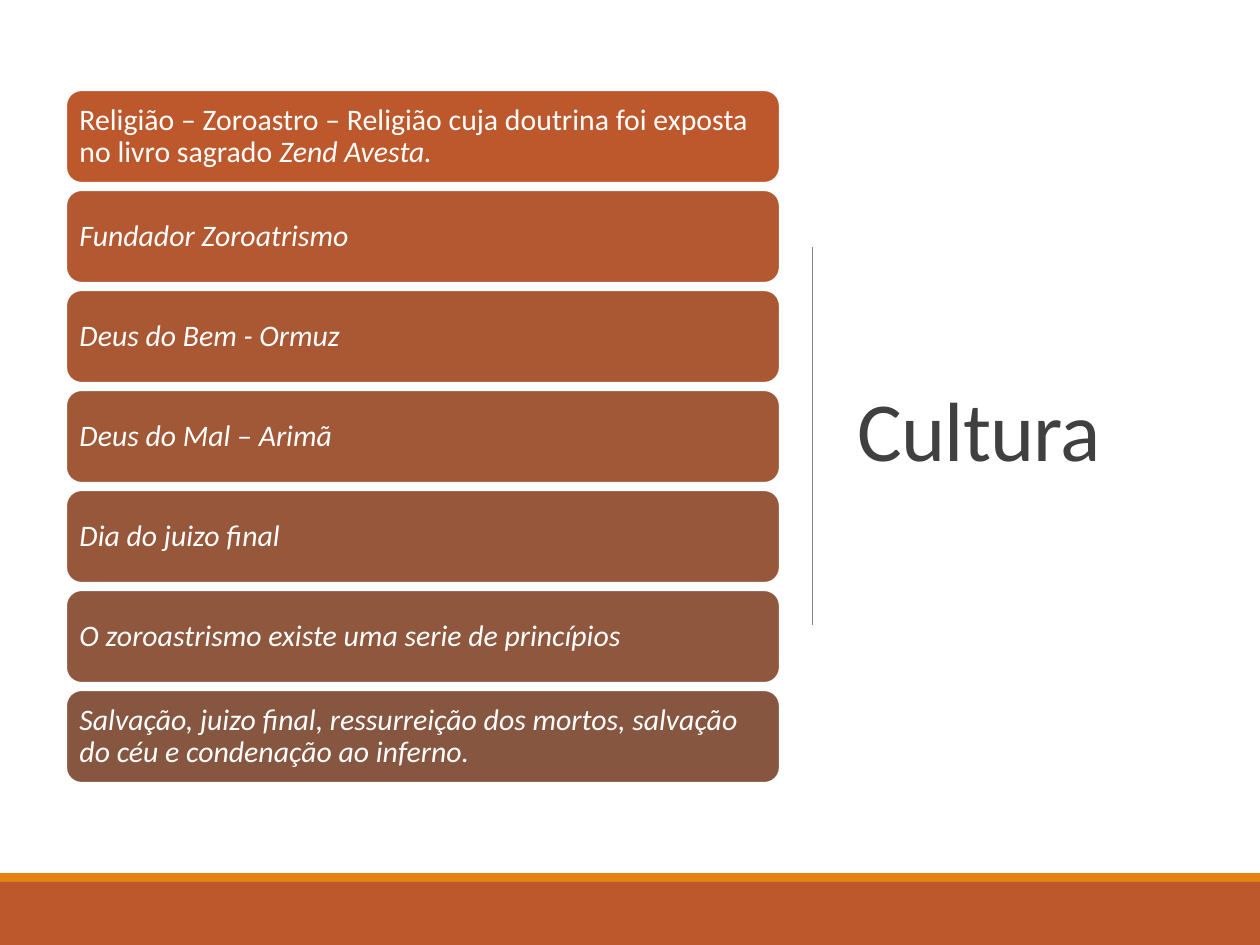
"""Build the Cultura slide: a stack of seven bars beside its title."""
import lxml.etree
import pptx
import pptx.dml.color
import pptx.enum.shapes
import pptx.enum.text
import pptx.oxml.ns
import pptx.util

HUES = {"white": "FFFFFF", "dark": "404040", "rule": "808080",
        "gold": "E48312", "rust": "BD582C"}
FADE = ["BD582C", "B35830", "AA5834", "A05837", "97573A", "8F573D", "865640"]
BARS = [
    [("Religião – Zoroastro – Religião cuja doutrina foi exposta "
      "no livro sagrado ", False), ("Zend Avesta.", True)],
    [("Fundador Zoroatrismo", True)],
    [("Deus do Bem - Ormuz", True)],
    [("Deus do Mal – Arimã", True)],
    [("Dia do juizo final", True)],
    [("O zoroastrismo existe uma serie de princípios", True)],
    [("Salvação, juizo final, ressurreição dos mortos, salvação "
      "do céu e condenação ao inferno.", True)],
]
TOP, STEP = 90, 100


def px(num):
    return pptx.util.Emu(round(num * 914400 / 126))


def tint(code):
    return pptx.dml.color.RGBColor.from_string(code)


class Deck:
    def __init__(self):
        self.font = "Calibri"
        self.file = pptx.Presentation()
        self.file.slide_width = px(1260)
        self.file.slide_height = px(945)
        self.slide = self.file.slides.add_slide(self.file.slide_layouts[5])

    def run(self, para, text, size, code, slant=False):
        run = para.add_run()
        run.text = text
        run.font.name = self.font
        run.font.size = pptx.util.Pt(size)
        run.font.italic = slant
        run.font.color.rgb = tint(code)
        return run

    def title(self, text, x, y, w, h):
        head = self.slide.shapes.title
        head.left, head.top, head.width, head.height = map(px, (x, y, w, h))
        frame = head.text_frame
        frame.word_wrap = True
        frame.vertical_anchor = pptx.enum.text.MSO_ANCHOR.MIDDLE
        para = frame.paragraphs[0]
        para.alignment = pptx.enum.text.PP_ALIGN.LEFT
        para.line_spacing = 0.85
        run = self.run(para, text, 48, HUES["dark"])
        run._r.get_or_add_rPr().set("spc", "-50")

    def shape(self, kind, x, y, w, h, code):
        shape = self.slide.shapes.add_shape(kind, *map(px, (x, y, w, h)))
        shape.shadow.inherit = False
        shape.fill.solid()
        shape.fill.fore_color.rgb = tint(code)
        shape.line.fill.background()
        return shape

    def band(self, y, h, code):
        self.shape(pptx.enum.shapes.MSO_SHAPE.RECTANGLE, 0, y, 1260, h, code)

    def bar(self, y, code, runs):
        kind = pptx.enum.shapes.MSO_SHAPE.ROUNDED_RECTANGLE
        shape = self.shape(kind, 66, y, 714, 93, code)
        shape.line.color.rgb = tint(HUES["white"])
        shape.line.width = pptx.util.Pt(1.25)
        frame = shape.text_frame
        frame.word_wrap = True
        frame.vertical_anchor = pptx.enum.text.MSO_ANCHOR.MIDDLE
        frame.margin_left = frame.margin_right = px(9)
        frame.margin_top = frame.margin_bottom = px(9)
        para = frame.paragraphs[0]
        para.alignment = pptx.enum.text.PP_ALIGN.LEFT
        para.line_spacing = 0.9
        for text, slant in runs:
            self.run(para, text, 17, HUES["white"], slant)

    def rule(self, x, y, end):
        kind = pptx.enum.shapes.MSO_CONNECTOR.STRAIGHT
        line = self.slide.shapes.add_connector(kind, *map(px, (x, y, x, end)))
        line.line.color.rgb = tint(HUES["rule"])
        line.line.width = pptx.util.Pt(0.5)
        lxml.etree.SubElement(line._element.spPr,
                              pptx.oxml.ns.qn("a:effectLst"))


def main():
    deck = Deck()
    deck.title("Cultura", 845, 87, 349, 697)
    deck.rule(812, 247, 625)
    deck.band(873, 9, HUES["gold"])
    deck.band(882, 63, HUES["rust"])
    for row, (code, runs) in enumerate(zip(FADE, BARS)):
        deck.bar(TOP + row * STEP, code, runs)
    deck.file.save("out.pptx")


if __name__ == "__main__":
    main()
